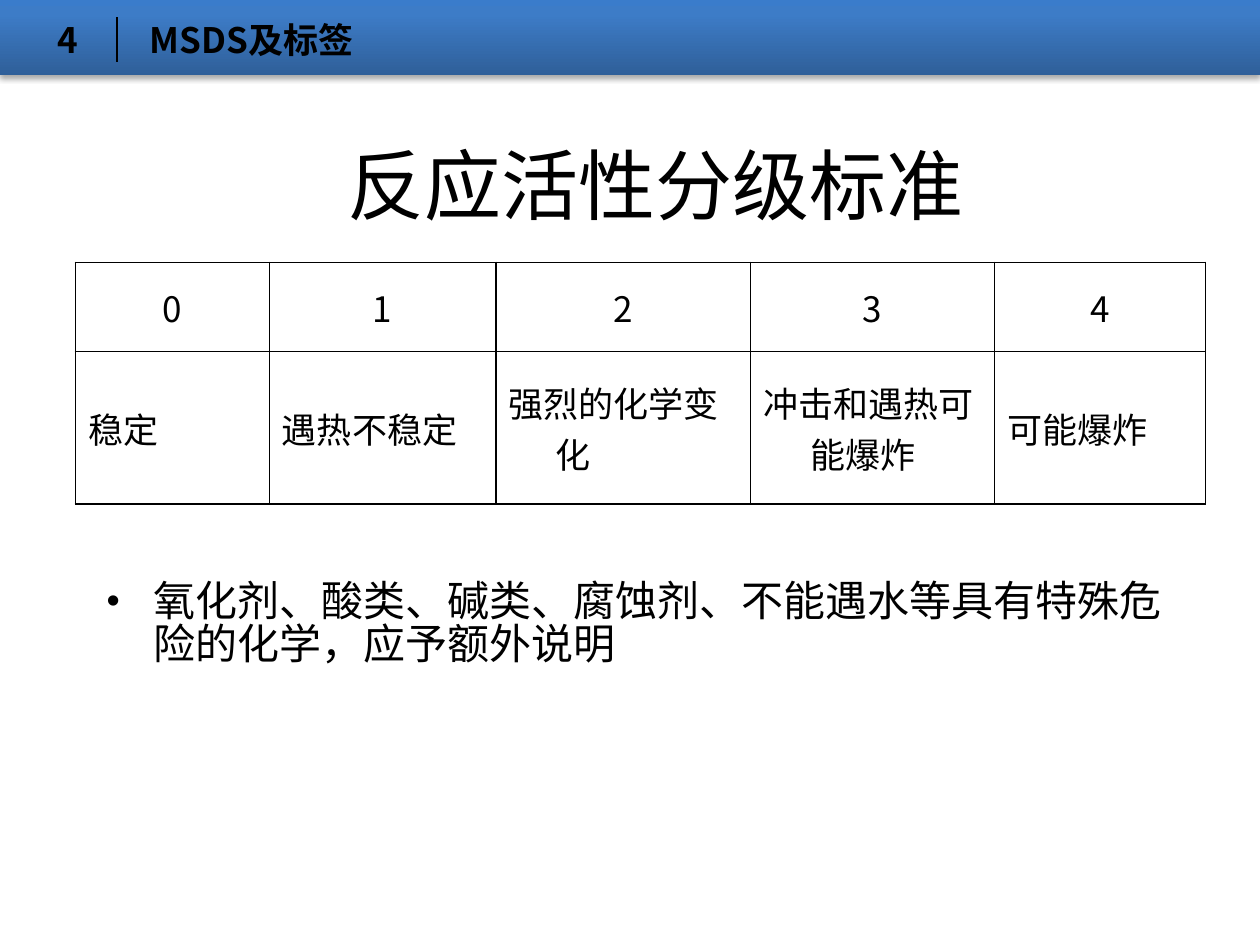
from lxml import etree
from pptx import Presentation
from pptx.dml.color import RGBColor as RGB
from pptx.enum.shapes import MSO_CONNECTOR as CONN, MSO_SHAPE as SHAPE
from pptx.enum.text import MSO_ANCHOR as ANCHOR, PP_ALIGN as ALIGN
from pptx.oxml import parse_xml
from pptx.oxml.ns import nsdecls, qn
from pptx.util import Cm, Pt

COLORS = {"ink": "000000", "band_low": "2F5F99", "band_mid": "3D7CC7", "band_top": "3A7CCB"}
FONT = "Noto Sans CJK SC"
GRADES = [
    ["0", "1", "2", "3", "4"],
    ["稳定", "遇热不稳定", "强烈的化学变化", "冲击和遇热可能爆炸", "可能爆炸"],
]


class SlideBuilder:
    """Holds the style and the current slide, with a method per element."""

    def __init__(self, slide, font, colors):
        self.s, self.font, self.colors = slide, font, colors

    def add_run(self, p, text, size, bold=False):
        r = p.add_run()
        r.text = text
        r.font.name, r.font.size, r.font.bold = self.font, Pt(size), bold
        r.font.color.rgb = RGB.from_string(self.colors["ink"])
        etree.SubElement(r._r.get_or_add_rPr(), qn("a:ea"), typeface=self.font)

    def hang(self, p, indent=0.95):
        pPr = p._p.get_or_add_pPr()
        pPr.set("marL", str(Cm(indent)))
        pPr.set("indent", str(-Cm(indent)))
        return pPr

    def band(self, x, y, w, h, stops):
        sp = self.s.shapes.add_shape(SHAPE.RECTANGLE, Cm(x), Cm(y), Cm(w), Cm(h))
        sp.line.fill.background()
        gs = "".join(
            f'<a:gs pos="{pos * 1000}"><a:srgbClr val="{self.colors[name]}"/></a:gs>'
            for pos, name in stops
        )
        sp._element.spPr.find(qn("a:prstGeom")).addnext(parse_xml(
            f'<a:gradFill {nsdecls("a")} rotWithShape="1"><a:gsLst>{gs}</a:gsLst>'
            '<a:lin ang="16200000" scaled="0"/></a:gradFill>'
        ))
        sp._element.spPr.append(parse_xml(
            f'<a:effectLst {nsdecls("a")}><a:outerShdw blurRad="{Pt(3.1)}" dist="{Pt(1.8)}" '
            f'dir="5400000" rotWithShape="0"><a:srgbClr val="{self.colors["ink"]}">'
            '<a:alpha val="35000"/></a:srgbClr></a:outerShdw></a:effectLst>'
        ))

    def text(self, x, y, w, h, text, size, bold=False, align=ALIGN.LEFT,
             anchor=ANCHOR.MIDDLE, inset=True):
        tf = self.s.shapes.add_textbox(Cm(x), Cm(y), Cm(w), Cm(h)).text_frame
        tf.word_wrap, tf.vertical_anchor = True, anchor
        if not inset:
            tf.margin_left = tf.margin_right = tf.margin_top = tf.margin_bottom = 0
        p = tf.paragraphs[0]
        p.alignment = align
        self.add_run(p, text, size, bold)
        return p

    def bullet(self, x, y, w, h, text, size):
        p = self.text(x, y, w, h, text, size, anchor=ANCHOR.TOP)
        p.space_before, p.line_spacing = Pt(size * 0.2), 0.84
        pPr = self.hang(p)
        etree.SubElement(pPr, qn("a:buSzPct"), val="90000")
        etree.SubElement(pPr, qn("a:buFont"), typeface="Arial")
        etree.SubElement(pPr, qn("a:buChar"), char="•")

    def line(self, x1, y1, x2, y2, width):
        c = self.s.shapes.add_connector(CONN.STRAIGHT, Cm(x1), Cm(y1), Cm(x2), Cm(y2))
        c.line.color.rgb = RGB.from_string(self.colors["ink"])
        c.line.width = Pt(width)
        etree.SubElement(c._element.spPr, qn("a:effectLst"))

    def borders(self, cell, width):
        tcPr = cell._tc.get_or_add_tcPr()
        for i, side in enumerate(("lnL", "lnR", "lnT", "lnB")):
            tcPr.insert(i, parse_xml(
                f'<a:{side} {nsdecls("a")} w="{Pt(width)}"><a:solidFill>'
                f'<a:srgbClr val="{self.colors["ink"]}"/></a:solidFill></a:{side}>'
            ))

    def table(self, x, y, cols, rows, data, size):
        tbl = self.s.shapes.add_table(
            len(rows), len(cols), Cm(x), Cm(y), Cm(sum(cols)), Cm(sum(rows))).table
        tbl.first_row = tbl.horz_banding = False
        for col, w in zip(tbl.columns, cols):
            col.width = Cm(w)
        for i, (row, h) in enumerate(zip(tbl.rows, rows)):
            row.height = Cm(h)
            for cell, value in zip(row.cells, data[i]):
                cell.fill.background()
                cell.vertical_anchor = ANCHOR.MIDDLE
                p = cell.text_frame.paragraphs[0]
                p.alignment = ALIGN.LEFT if i else ALIGN.CENTER
                self.hang(p)
                self.add_run(p, value, size)
                self.borders(cell, 1)


def main():
    prs = Presentation()
    prs.slide_width, prs.slide_height = Cm(25.4), Cm(19.05)
    b = SlideBuilder(prs.slides.add_slide(prs.slide_layouts[6]), FONT, COLORS)
    b.band(0, -0.03, 25.4, 1.55, [(0, "band_low"), (80, "band_mid"), (100, "band_top")])
    b.text(0.69, 0.03, 1.35, 1.52, "4", 20, bold=True, align=ALIGN.CENTER, inset=False)
    b.text(3.02, 0.03, 7.44, 1.52, "MSDS及标签", 20, bold=True, inset=False)
    b.line(2.36, 0.35, 2.36, 1.24, 0.75)
    b.text(4.24, 2.11, 17.98, 3.18, "反应活性分级标准", 44, align=ALIGN.CENTER)
    b.table(1.52, 5.29, [3.91, 4.57, 5.13, 4.92, 4.25], [1.8, 3.07], GRADES, 20)
    b.bullet(1.9, 11.63, 22.02, 2.97,
             "氧化剂、酸类、碱类、腐蚀剂、不能遇水等具有特殊危险的化学，应予额外说明", 24)
    prs.save("out.pptx")


if __name__ == "__main__":
    main()
